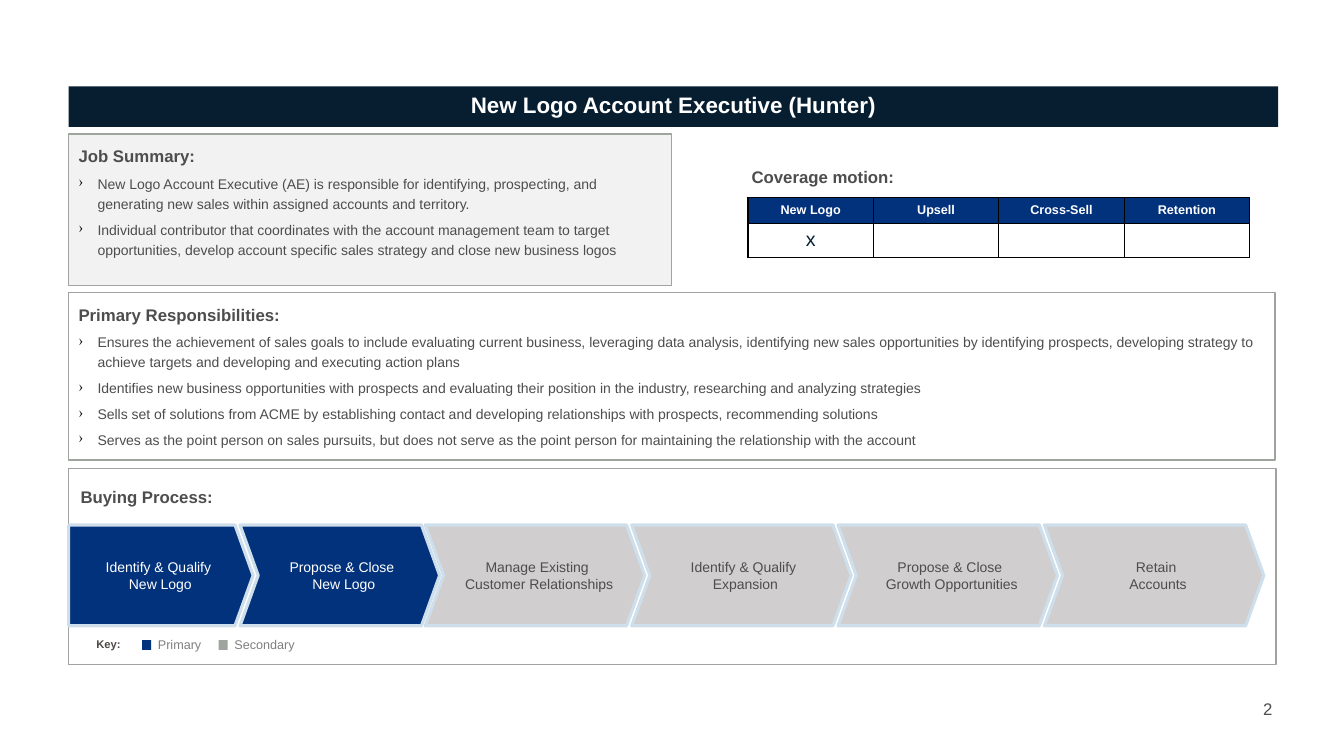
from dataclasses import dataclass

import lxml.etree
import pptx
import pptx.dml.color
import pptx.enum.shapes
import pptx.enum.text
import pptx.oxml.ns
import pptx.util

Cm, Pt = pptx.util.Cm, pptx.util.Pt
RGBColor = pptx.dml.color.RGBColor
SHAPE = pptx.enum.shapes.MSO_SHAPE
ANCHOR = pptx.enum.text.MSO_ANCHOR
ALIGN = pptx.enum.text.PP_ALIGN
qn = pptx.oxml.ns.qn

# Colours
NAVY = RGBColor(0x07, 0x1E, 0x31)
BLUE = RGBColor(0x03, 0x32, 0x7C)
PALE_BLUE = RGBColor(0xCE, 0xDF, 0xEB)
SILVER = RGBColor(0xD0, 0xCE, 0xCE)
LIGHT = RGBColor(0xF2, 0xF2, 0xF2)
GREY = RGBColor(0x9F, 0xA4, 0x9F)
MID_GREY = RGBColor(0x7F, 0x7F, 0x7F)
KEY_GREY = RGBColor(0x4C, 0x48, 0x46)
TEXT = RGBColor(0x4D, 0x4D, 0x4D)
WHITE = RGBColor(0xFF, 0xFF, 0xFF)
BLACK = RGBColor(0, 0, 0)

LEFT = 1.73
NO_INSETS = (0, 0, 0, 0)
BOX_INSETS = (0.25, 0.13, 0.25, 0.13)
PANEL_INSETS = (0.25, 0.2, 0.25, 0.13)
STEP_INSETS = (0.2, 0.3, 0, 0.3)


@dataclass
class Panel:
    top: float
    width: float
    height: float
    fill: RGBColor
    heading: str
    bullets: list[str]


@dataclass
class Step:
    label: str
    left: float
    width: float
    primary: bool = False


@dataclass
class KeyItem:
    label: str
    left: float
    width: float
    color: RGBColor


PANELS = [
    Panel(3.38, 15.19, 3.81, LIGHT, "Job Summary:", [
        "New Logo Account Executive (AE) is responsible for identifying, prospecting, and "
        "generating new sales within assigned accounts and territory.",
        "Individual contributor that coordinates with the account management team to target "
        "opportunities, develop account specific sales strategy and close new business logos",
    ]),
    Panel(7.37, 30.4, 4.22, WHITE, "Primary Responsibilities:", [
        "Ensures the achievement of sales goals to include evaluating current business, "
        "leveraging data analysis, identifying new sales opportunities by identifying "
        "prospects, developing strategy to achieve targets and developing and executing "
        "action plans",
        "Identifies new business opportunities with prospects and evaluating their position "
        "in the industry, researching and analyzing strategies",
        "Sells set of solutions from ACME by establishing contact and developing "
        "relationships with prospects, recommending solutions",
        "Serves as the point person on sales pursuits, but does not serve as the point person "
        "for maintaining the relationship with the account",
    ]),
]
SECONDARY_STEPS = ["Manage Existing \nCustomer Relationships", "Identify & Qualify \nExpansion",
                   "Propose & Close \nGrowth Opportunities", "Retain \nAccounts"]
STEPS = [Step("Propose & Close \nNew Logo", 6.05, 5.03, True)]
STEPS += [Step(label, 10.72 + 5.2 * i, 5.53) for i, label in enumerate(SECONDARY_STEPS)]
STEPS.append(Step("Identify & Qualify \nNew Logo", LEFT, 4.65, True))
KEY = [KeyItem("Primary", 3.58, 1.91, BLUE), KeyItem("Secondary", 5.51, 2.44, GREY)]
MOTIONS = [["New Logo", "Upsell", "Cross-Sell", "Retention"], ["x", "", "", ""]]


def apply(obj: object, values: dict) -> None:
    for name, value in values.items():
        setattr(obj, name, value)


def write(p, text: str, size: float, color: RGBColor, bold: bool = False, **fmt) -> None:
    apply(p, fmt)
    p.text = text
    for r in p.runs:
        apply(r.font, {"name": "Arial", "size": Pt(size), "bold": bold})
        r.font.color.rgb = color
    for br in p._p.findall(qn("a:br")):
        lxml.etree.SubElement(br, qn("a:rPr"), sz=str(int(size * 100)))
    if not text:
        lxml.etree.SubElement(p._p, qn("a:endParaRPr"), sz=str(int(size * 100)))


def set_frame(tf, insets: tuple, anchor=ANCHOR.TOP) -> None:
    sides = ("margin_left", "margin_top", "margin_right", "margin_bottom")
    apply(tf, {side: Cm(v) for side, v in zip(sides, insets)})
    apply(tf, {"word_wrap": True, "vertical_anchor": anchor})


def add_box(s, kind, at: tuple, fill: RGBColor | None, line: RGBColor | None = None,
            weight: float = 1):
    sp = s.shapes.add_shape(kind, *map(Cm, at))
    sp.shadow.inherit = False
    if fill is None:
        sp.fill.background()
    else:
        sp.fill.solid()
        sp.fill.fore_color.rgb = fill
    if line is None:
        sp.line.fill.background()
    else:
        sp.line.color.rgb = line
        sp.line.width = Pt(weight)
    return sp


def add_label(s, at: tuple, text: str, size: float, color: RGBColor, bold: bool = False,
              insets: tuple = BOX_INSETS, anchor=ANCHOR.TOP, **fmt) -> None:
    tf = s.shapes.add_textbox(*map(Cm, at)).text_frame
    set_frame(tf, insets, anchor)
    write(tf.paragraphs[0], text, size, color, bold, **fmt)


def add_bullet(p) -> None:
    pPr = p._p.get_or_add_pPr()
    apply_indent = {"marL": str(Cm(0.48)), "indent": str(-Cm(0.48))}
    for name, value in apply_indent.items():
        pPr.set(name, value)
    clr = lxml.etree.SubElement(pPr, qn("a:buClr"))
    lxml.etree.SubElement(clr, qn("a:srgbClr"), val=str(BLACK))
    lxml.etree.SubElement(pPr, qn("a:buChar"), char="›")


def add_panel(s, panel: Panel) -> None:
    at = (LEFT, panel.top, panel.width, panel.height)
    tf = add_box(s, SHAPE.RECTANGLE, at, panel.fill, GREY).text_frame
    set_frame(tf, PANEL_INSETS)
    fmt = {"alignment": ALIGN.LEFT, "line_spacing": 1.2, "space_after": Pt(2)}
    write(tf.paragraphs[0], panel.heading, 12, TEXT, True, **fmt)
    for bullet in panel.bullets:
        p = tf.add_paragraph()
        add_bullet(p)
        write(p, bullet, 10, TEXT, space_before=Pt(2), **fmt)


def add_step(s, step: Step) -> None:
    kind = SHAPE.PENTAGON if step.left == LEFT else SHAPE.CHEVRON
    sp = add_box(s, kind, (step.left, 13.23, step.width, 2.54),
                 BLUE if step.primary else SILVER, PALE_BLUE, 2.25)
    sp.adjustments[0] = 0.18
    set_frame(sp.text_frame, STEP_INSETS, ANCHOR.MIDDLE)
    write(sp.text_frame.paragraphs[0], step.label, 10, WHITE if step.primary else TEXT,
          alignment=ALIGN.CENTER)


def add_borders(cell) -> None:
    tcPr = cell._tc.get_or_add_tcPr()
    for i, side in enumerate(("lnL", "lnR", "lnT", "lnB")):
        ln = lxml.etree.Element(qn("a:" + side), w=str(Pt(1)))
        fill = lxml.etree.SubElement(ln, qn("a:solidFill"))
        lxml.etree.SubElement(fill, qn("a:srgbClr"), val=str(BLACK))
        tcPr.insert(i, ln)


def add_motion_table(s) -> None:
    table = s.shapes.add_table(2, 4, Cm(18.85), Cm(4.98), Cm(12.64), Cm(1.5)).table
    apply(table, {"first_row": False, "horz_banding": False})
    for col in table.columns:
        col.width = Cm(3.16)
    looks = [(0.66, BLUE, 9, WHITE, True), (0.84, WHITE, 14, NAVY, False)]
    for i, (height, fill, size, color, bold) in enumerate(looks):
        table.rows[i].height = Cm(height)
        for j, text in enumerate(MOTIONS[i]):
            cell = table.cell(i, j)
            cell.fill.solid()
            cell.fill.fore_color.rgb = fill
            add_borders(cell)
            write(cell.text_frame.paragraphs[0], text, size, color, bold,
                  alignment=ALIGN.CENTER)


def main() -> None:
    prs = pptx.Presentation()
    apply(prs, {"slide_width": Cm(33.87), "slide_height": Cm(19.05)})
    s = prs.slides.add_slide(prs.slide_layouts[6])

    # Title bar and page number
    sp = add_box(s, SHAPE.RECTANGLE, (LEFT, 2.18, 30.48, 1.02), NAVY)
    set_frame(sp.text_frame, NO_INSETS, ANCHOR.MIDDLE)
    write(sp.text_frame.paragraphs[0], "New Logo Account Executive (Hunter)", 16, WHITE, True,
          alignment=ALIGN.CENTER, line_spacing=0.9)
    add_label(s, (31.83, 17.6, 0.86, 0.51), "2", 12, TEXT, insets=NO_INSETS,
              anchor=ANCHOR.MIDDLE)

    # Summary and responsibilities
    for panel in PANELS:
        add_panel(s, panel)

    # Buying process with its key
    add_box(s, SHAPE.RECTANGLE, (LEFT, 11.81, 30.43, 4.93), None, GREY)
    add_label(s, (1.78, 12.14, 8.53, 0.76), "Buying Process:", 12, TEXT, True)
    for step in STEPS:
        add_step(s, step)
    add_label(s, (LEFT, 15.93, 2.01, 0.61), "Key:", 8, KEY_GREY, True, alignment=ALIGN.CENTER)
    for item in KEY:
        add_box(s, SHAPE.RECTANGLE, (item.left, 16.13, 0.23, 0.25), item.color)
        add_label(s, (item.left + 0.15, 15.93, item.width, 0.64), item.label, 9, MID_GREY)

    # Coverage motion
    add_label(s, (18.69, 4.06, 5.94, 0.28), "Coverage motion:", 12, TEXT, True)
    add_motion_table(s)

    prs.save("out.pptx")


if __name__ == "__main__":
    main()
